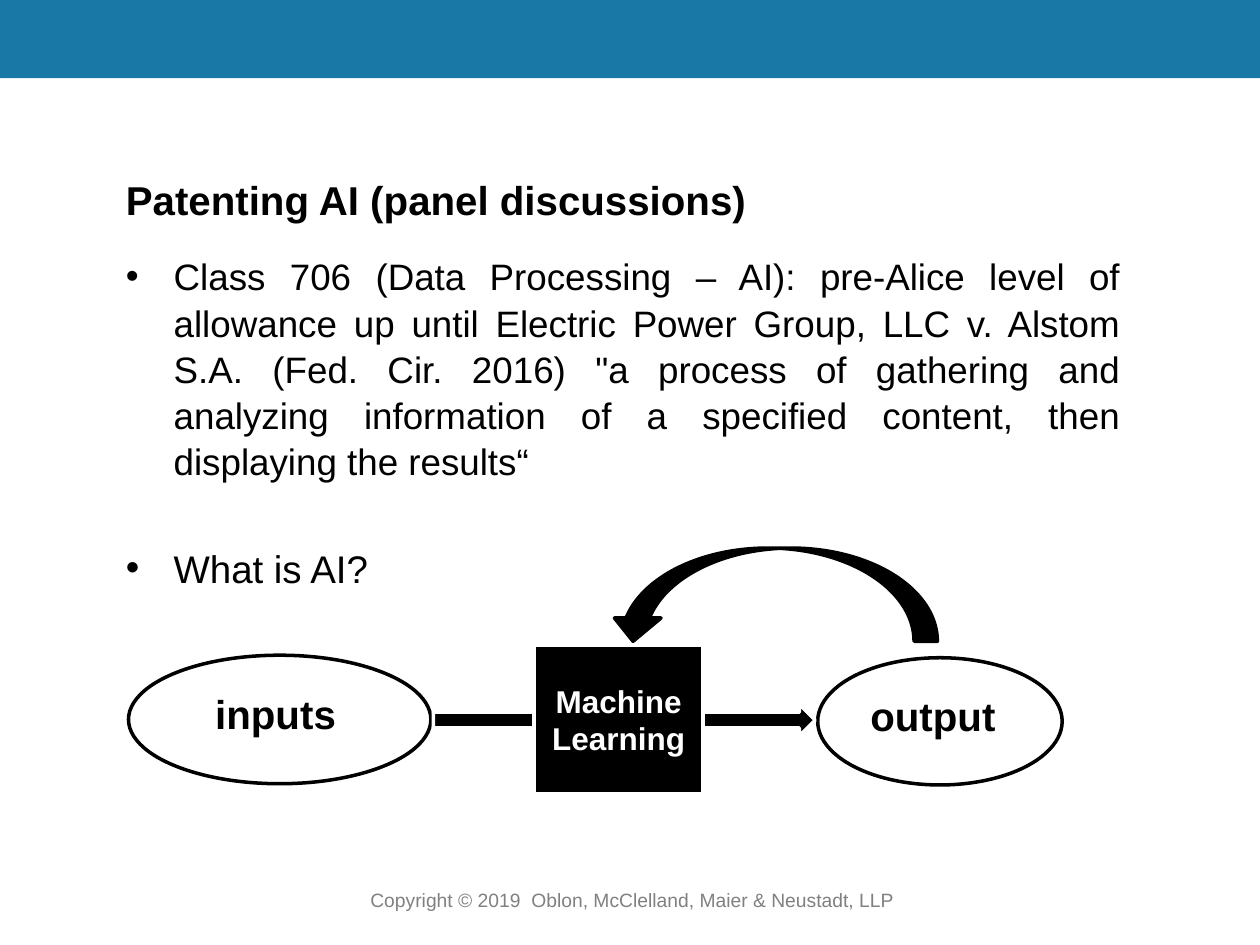
from pptx import Presentation
from pptx.dml.color import RGBColor
from pptx.enum.shapes import MSO_SHAPE
from pptx.enum.text import MSO_ANCHOR, PP_ALIGN
from pptx.oxml.ns import qn
from pptx.util import Inches, Pt
from lxml import etree

BLUE = RGBColor(0x19, 0x78, 0xA6)
BLACK = RGBColor(0, 0, 0)
WHITE = RGBColor(255, 255, 255)
GRAY = RGBColor(0x80, 0x80, 0x80)
RECT, OVAL = MSO_SHAPE.RECTANGLE, MSO_SHAPE.OVAL
ARROW, LOOP = MSO_SHAPE.RIGHT_ARROW, MSO_SHAPE.CURVED_DOWN_ARROW
LEFT, CENTER, JUST = PP_ALIGN.LEFT, PP_ALIGN.CENTER, PP_ALIGN.JUSTIFY
TOP, MIDDLE = MSO_ANCHOR.TOP, MSO_ANCHOR.MIDDLE


def write(para, text, size=23, color=BLACK, bold=False, align=LEFT,
          before=0, spacing=None, bullet=False):
    if bullet:
        props = para._p.get_or_add_pPr()
        indent = Inches(0.38)
        props.set("marL", str(indent))
        props.set("indent", str(-indent))
        etree.SubElement(props, qn("a:buFont")).set("typeface", "Arial")
        etree.SubElement(props, qn("a:buChar")).set("char", "•")
    para.alignment = align
    para.space_before = Pt(before)
    if spacing:
        para.line_spacing = spacing
    run = para.add_run()
    run.text = text
    font = run.font
    font.name, font.size, font.bold = "Arial", Pt(size), bold
    font.color.rgb = color


class Deck:
    def __init__(self):
        self.prs = Presentation()
        self.prs.slide_width, self.prs.slide_height = Inches(10), Inches(7.5)
        self.slide = self.prs.slides.add_slide(self.prs.slide_layouts[6])

    def shape(self, kind, at, fill, line=None):
        item = self.slide.shapes.add_shape(kind, *map(Inches, at))
        item.shadow.inherit = False
        item.fill.solid()
        item.fill.fore_color.rgb = fill
        if line is None:
            item.line.fill.background()
        else:
            item.line.color.rgb = line
            item.line.width = Pt(2)
        return item

    def fill(self, item, paras, anchor=TOP, wrap=True):
        """Put (text, format) pairs into a shape, one paragraph each."""
        frame = item.text_frame
        frame.word_wrap = wrap
        frame.vertical_anchor = anchor
        for i, (text, style) in enumerate(paras):
            para = frame.add_paragraph() if i else frame.paragraphs[0]
            write(para, text, **style)

    def text(self, at, paras, **frame):
        box = self.slide.shapes.add_textbox(*map(Inches, at))
        self.fill(box, paras, **frame)


def main():
    deck = Deck()
    deck.shape(RECT, (0, 0, 10, 0.62), BLUE)
    deck.text((2.52, 7, 5, 0.29), [
        ("Copyright © 2019  Oblon, McClelland, Maier & Neustadt, LLP",
         dict(size=11, color=GRAY, align=CENTER))])

    deck.text((0.9, 0.95, 8.15, 1.27),
              [("Patenting AI (panel discussions)", dict(bold=True))],
              anchor=MIDDLE)
    deck.text((0.9, 1.95, 8.09, 4.55), [
        ("Class 706 (Data Processing – AI): pre-Alice level of allowance up "
         "until Electric Power Group, LLC v. Alstom S.A. (Fed. Cir. 2016) "
         "\"a process of gathering and analyzing information of a specified "
         "content, then displaying the results“",
         dict(size=21, align=JUST, spacing=1.05, bullet=True)),
        ("What is AI?", dict(size=22, before=35, bullet=True))])

    deck.shape(OVAL, (6.49, 5.22, 1.94, 1.01), WHITE, BLACK)
    deck.shape(OVAL, (1.02, 5.2, 2.4, 1.02), WHITE, BLACK)
    loop = deck.shape(LOOP, (4.84, 4.35, 2.6, 0.74), BLACK, BLACK)
    loop._element.spPr.find(qn("a:xfrm")).set("flipH", "1")
    deck.shape(ARROW, (3.44, 5.59, 3.03, 0.25), BLACK, WHITE)
    model = deck.shape(RECT, (4.24, 5.12, 1.34, 1.18), BLACK, WHITE)
    style = dict(size=18, color=WHITE, bold=True, align=CENTER)
    deck.fill(model, [(word, style) for word in ("Machine", "Learning")],
              anchor=MIDDLE)
    for word, at in (("inputs", (1.61, 5.42, 1.17, 0.49)),
                     ("output", (6.81, 5.44, 1.2, 0.49))):
        deck.text(at, [(word, dict(bold=True))], wrap=False)

    deck.prs.save("out.pptx")


if __name__ == "__main__":
    main()
